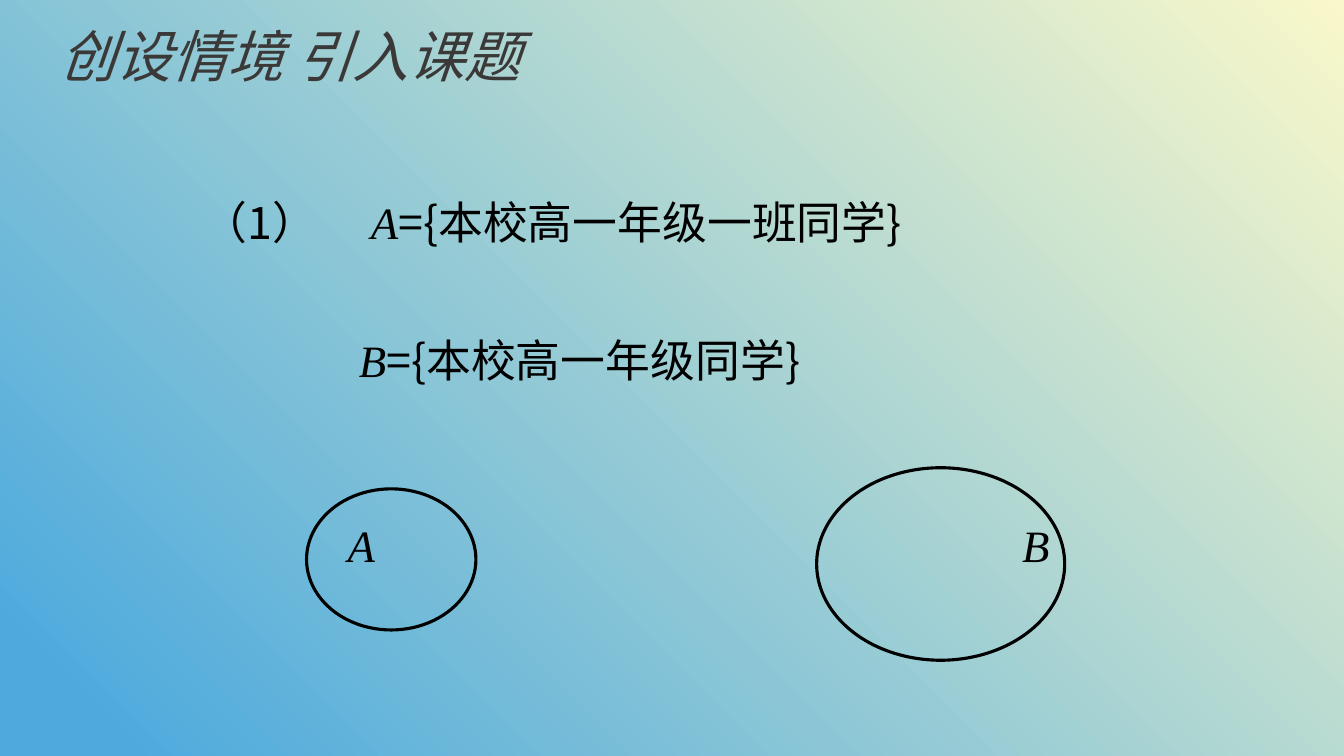
from dataclasses import dataclass
from typing import Any

import pptx
import pptx.dml.color
import pptx.enum.shapes
import pptx.enum.text
import pptx.oxml
import pptx.oxml.ns
import pptx.util

Inches = pptx.util.Inches
Box = tuple[float, float, float, float]


@dataclass(frozen=True)
class Theme:
    sans: str = "Noto Sans CJK SC"
    serif: str = "Times New Roman"
    ink: str = "000000"
    heading: str = "3B3838"
    sky: str = "4EAADD"
    cream: str = "F9F8CA"
    title_pt: float = 40
    body_pt: float = 32
    outline_pt: float = 2.25


@dataclass(frozen=True)
class Run:
    text: str
    math: bool = False


@dataclass(frozen=True)
class SetLine:
    box: Box
    runs: tuple[Run, ...]
    tab: float = 0


@dataclass(frozen=True)
class VennSet:
    oval: Box
    label: SetLine


THEME = Theme()

SET_LINES = (
    SetLine((1.91, 1.88, 8.75, 0.64),
            (Run("（1）\t"), Run("A", True), Run("={本校高一年级一班同学}")), tab=1.67),
    SetLine((3.46, 3.25, 8.75, 0.64),
            (Run("B", True), Run("={本校高一年级同学}"))),
)
VENN_SETS = (
    VennSet((3.04, 4.85, 1.68, 1.4), SetLine((3.35, 5.09, 0.47, 0.64), (Run("A", True),))),
    VennSet((8.1, 4.64, 2.46, 1.91), SetLine((10.04, 5.09, 0.47, 0.64), (Run("B", True),))),
)


def rgb(value: str) -> pptx.dml.color.RGBColor:
    return pptx.dml.color.RGBColor.from_string(value)


def place(box: Box) -> list[int]:
    return [Inches(v) for v in box]


def add_run(p: Any, text: str, face: str, size: float, color: str, italic: bool) -> None:
    r = p.add_run()
    r.text = text
    r.font.size = pptx.util.Pt(size)
    r.font.italic = italic
    r.font.color.rgb = rgb(color)
    r.font.name = face
    ea = pptx.oxml.parse_xml(f'<a:ea {pptx.oxml.ns.nsdecls("a")} typeface="{face}"/>')
    r.font._element.find(pptx.oxml.ns.qn("a:latin")).addnext(ea)


def add_set_line(shapes: Any, line: SetLine, wrap: bool) -> None:
    tf = shapes.add_textbox(*place(line.box)).text_frame
    tf.word_wrap = wrap
    tf.auto_size = pptx.enum.text.MSO_AUTO_SIZE.SHAPE_TO_FIT_TEXT
    p = tf.paragraphs[0]
    if line.tab:
        p._p.get_or_add_pPr().append(pptx.oxml.parse_xml(
            f'<a:tabLst {pptx.oxml.ns.nsdecls("a")}>'
            f'<a:tab pos="{Inches(line.tab)}" algn="l"/></a:tabLst>'))
    for run in line.runs:
        face = THEME.serif if run.math else THEME.sans
        add_run(p, run.text, face, THEME.body_pt, THEME.ink, run.math)


def add_venn_set(s: Any, venn: VennSet) -> None:
    group = s.shapes.add_group_shape()
    oval = group.shapes.add_shape(pptx.enum.shapes.MSO_SHAPE.OVAL, *place(venn.oval))
    oval.shadow.inherit = False
    oval.fill.background()
    oval.line.color.rgb = rgb(THEME.ink)
    oval.line.width = pptx.util.Pt(THEME.outline_pt)
    add_set_line(group.shapes, venn.label, wrap=False)


def add_title(s: Any, text: str) -> None:
    sp = s.shapes.add_shape(pptx.enum.shapes.MSO_SHAPE.PARALLELOGRAM,
                            *place((-0.13, 0.04, 6.01, 1.01)))
    sp.shadow.inherit = False
    sp.fill.background()
    sp.line.fill.background()
    tf = sp.text_frame
    tf.word_wrap = False
    tf.auto_size = pptx.enum.text.MSO_AUTO_SIZE.SHAPE_TO_FIT_TEXT
    tf.vertical_anchor = pptx.enum.text.MSO_ANCHOR.MIDDLE
    p = tf.paragraphs[0]
    p.alignment = pptx.enum.text.PP_ALIGN.CENTER
    add_run(p, text, THEME.sans, THEME.title_pt, THEME.heading, True)


def paint_background(s: Any) -> None:
    fill = s.background.fill
    fill.gradient()
    fill.gradient_angle = 45
    stops = ((0.06, THEME.sky), (1.0, THEME.cream))
    for stop, (position, color) in zip(fill.gradient_stops, stops):
        stop.position = position
        stop.color.rgb = rgb(color)


def main() -> None:
    prs = pptx.Presentation()
    prs.slide_width, prs.slide_height = Inches(13.33), Inches(7.5)
    s = prs.slides.add_slide(prs.slide_layouts[6])
    paint_background(s)
    add_title(s, "创设情境 引入课题")
    for venn in VENN_SETS:
        add_venn_set(s, venn)
    for line in SET_LINES:
        add_set_line(s.shapes, line, wrap=True)
    prs.save("out.pptx")


if __name__ == "__main__":
    main()
